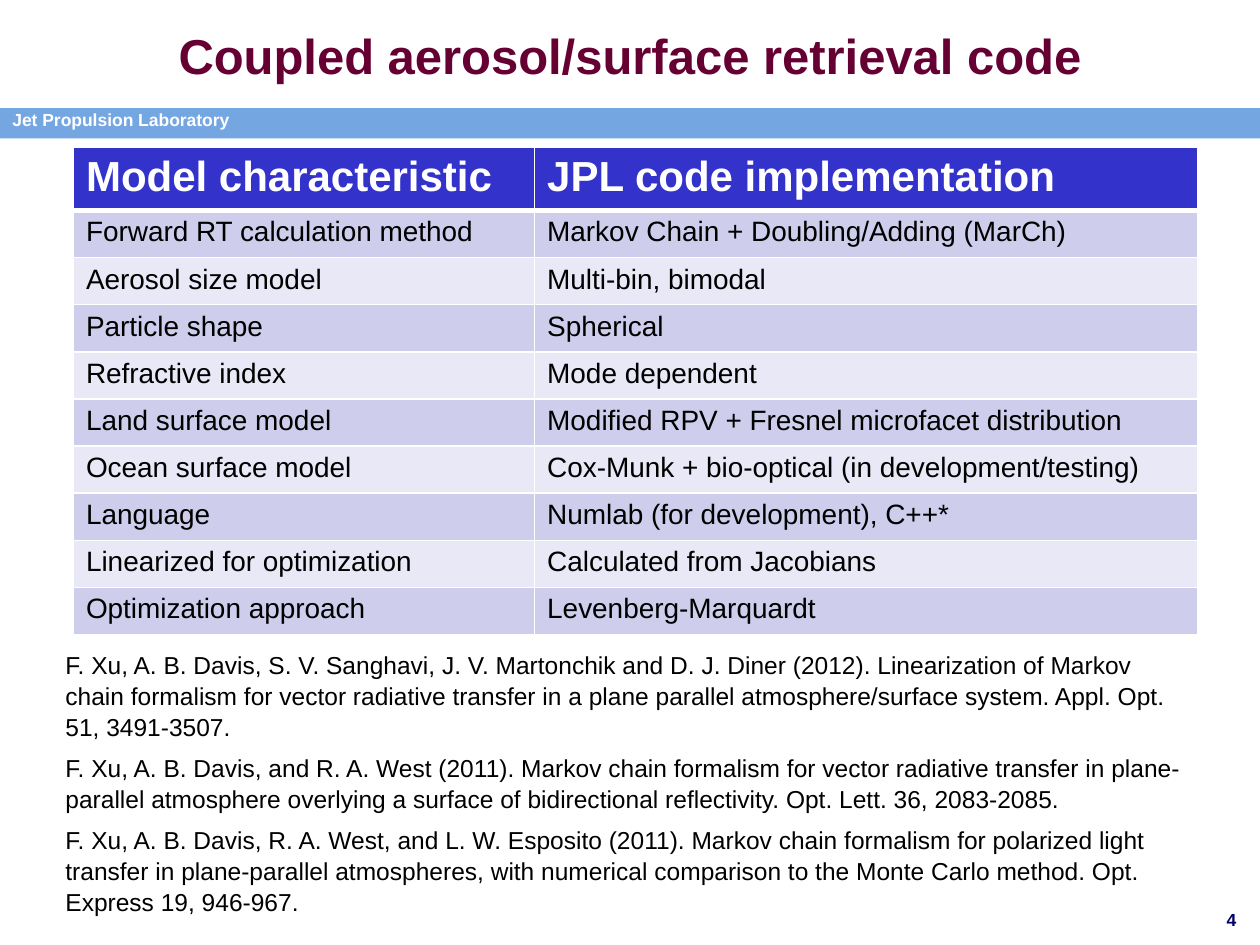
from dataclasses import dataclass

from lxml import etree
from pptx import Presentation
from pptx.dml.color import RGBColor
from pptx.enum import shapes, text
from pptx.oxml.ns import qn
from pptx.util import Cm, Pt


@dataclass(frozen=True)
class Theme:
    """Colours, font and type sizes of the slide."""
    font: str = "Arial"
    white: str = "FFFFFF"
    ink: str = "000000"
    title: str = "660033"
    bar: str = "74A6E2"
    head: str = "3333CC"
    bands: tuple = ("CECEEC", "E8E8F6")
    page: str = "000066"
    big: int = 28
    mid: int = 24
    body: int = 16
    cite: int = 14
    small: int = 10


T = Theme()

ROWS = [
    ("Model characteristic", "JPL code implementation"),
    ("Forward RT calculation method", "Markov Chain + Doubling/Adding (MarCh)"),
    ("Aerosol size model", "Multi-bin, bimodal"),
    ("Particle shape", "Spherical"),
    ("Refractive index", "Mode dependent"),
    ("Land surface model", "Modified RPV + Fresnel microfacet distribution"),
    ("Ocean surface model", "Cox-Munk + bio-optical (in development/testing)"),
    ("Language", "Numlab (for development), C++*"),
    ("Linearized for optimization", "Calculated from Jacobians"),
    ("Optimization approach", "Levenberg-Marquardt"),
]

CITES = [
    "F. Xu, A. B. Davis, S. V. Sanghavi, J. V. Martonchik and D. J. Diner (2012). "
    "Linearization of Markov chain formalism for vector radiative transfer in a plane "
    "parallel atmosphere/surface system. Appl. Opt. 51, 3491-3507.",
    "F. Xu, A. B. Davis, and R. A. West (2011). Markov chain formalism for vector "
    "radiative transfer in plane-parallel atmosphere overlying a surface of "
    "bidirectional reflectivity. Opt. Lett. 36, 2083-2085.",
    "F. Xu, A. B. Davis, R. A. West, and L. W. Esposito (2011). Markov chain formalism "
    "for polarized light transfer in plane-parallel atmospheres, with numerical "
    "comparison to the Monte Carlo method. Opt. Express 19, 946-967.",
]


def style(frame, size, color, bold=False, align=text.PP_ALIGN.LEFT):
    """Format every run of a text frame."""
    for para in frame.paragraphs:
        para.alignment = align
        for run in para.runs:
            run.font.name = T.font
            run.font.size = Pt(size)
            run.font.bold = bold
            run.font.color.rgb = RGBColor.from_string(color)


def label(slide, box, words, size, color, wrap=True, **look):
    """Add a text box in the given box and return its frame."""
    frame = slide.shapes.add_textbox(*map(Cm, box)).text_frame
    frame.word_wrap = wrap
    frame.text = words
    style(frame, size, color, **look)
    return frame


def edge(cell, side, width):
    """Draw one white border of a cell."""
    line = etree.SubElement(cell._tc.get_or_add_tcPr(), qn(f"a:ln{side}"), w=str(Pt(width)))
    fill = etree.SubElement(line, qn("a:solidFill"))
    etree.SubElement(fill, qn("a:srgbClr"), val=T.white)


def header(slide, box):
    """Place the title above the banner bar."""
    left, top, width, height = box
    bar = slide.shapes.add_shape(
        shapes.MSO_SHAPE.RECTANGLE, Cm(left), Cm(top + 2.18), Cm(width), Cm(0.61))
    bar.shadow.inherit = False
    bar.fill.solid()
    bar.fill.fore_color.rgb = RGBColor.from_string(T.bar)
    bar.line.fill.background()
    label(slide, (left, top + 2.08, 4.95, 0.69), "Jet Propulsion Laboratory",
          T.small, T.white, wrap=False, bold=True)
    title = label(slide, (left + 1.9, top - 0.13, width - 3.8, 2.46),
                  "Coupled aerosol/surface retrieval code", T.big, T.title,
                  bold=True, align=text.PP_ALIGN.CENTER)
    title.vertical_anchor = text.MSO_ANCHOR.MIDDLE


def grid(slide, box):
    """Place the table of model traits."""
    left, top, width, height = box
    first, rest = 3.66 / 8.92 * width, 0.95
    table = slide.shapes.add_table(len(ROWS), 2, *map(Cm, box)).table
    table.columns[0].width = Cm(first)
    table.columns[1].width = Cm(width - first)
    for r, row in enumerate(ROWS):
        head = r == 0
        table.rows[r].height = Cm(height - rest * (len(ROWS) - 1) if head else rest)
        for c, words in enumerate(row):
            cell = table.cell(r, c)
            cell.text = words
            style(cell.text_frame, T.mid if head else T.body,
                  T.white if head else T.ink, bold=head)
            for side in "LRTB":
                heavy = (head and side == "B") or (r == 1 and side == "T")
                edge(cell, side, 3 if heavy else 1)
            cell.fill.solid()
            shade = T.head if head else T.bands[(r - 1) % 2]
            cell.fill.fore_color.rgb = RGBColor.from_string(shade)


def cites(slide, box):
    """Place the list of references."""
    frame = label(slide, box, "\n".join(CITES), T.cite, T.ink)
    for para in frame.paragraphs:
        para.line_spacing = 1.05
        para.space_after = Pt(6)


def main():
    """Build and save the slide."""
    deck = Presentation()
    deck.slide_width, deck.slide_height = Cm(25.4), Cm(19.05)
    slide = deck.slides.add_slide(deck.slide_layouts[6])
    header(slide, (0, 0, 25.4, 2.79))
    grid(slide, (1.48, 2.97, 22.66, 9.73))
    cites(slide, (1.07, 12.95, 23.29, 5.46))
    label(slide, (19.89, 18.21, 5.28, 0.64), "4", T.small, T.page,
          bold=True, align=text.PP_ALIGN.RIGHT)
    deck.save("out.pptx")


if __name__ == "__main__":
    main()
